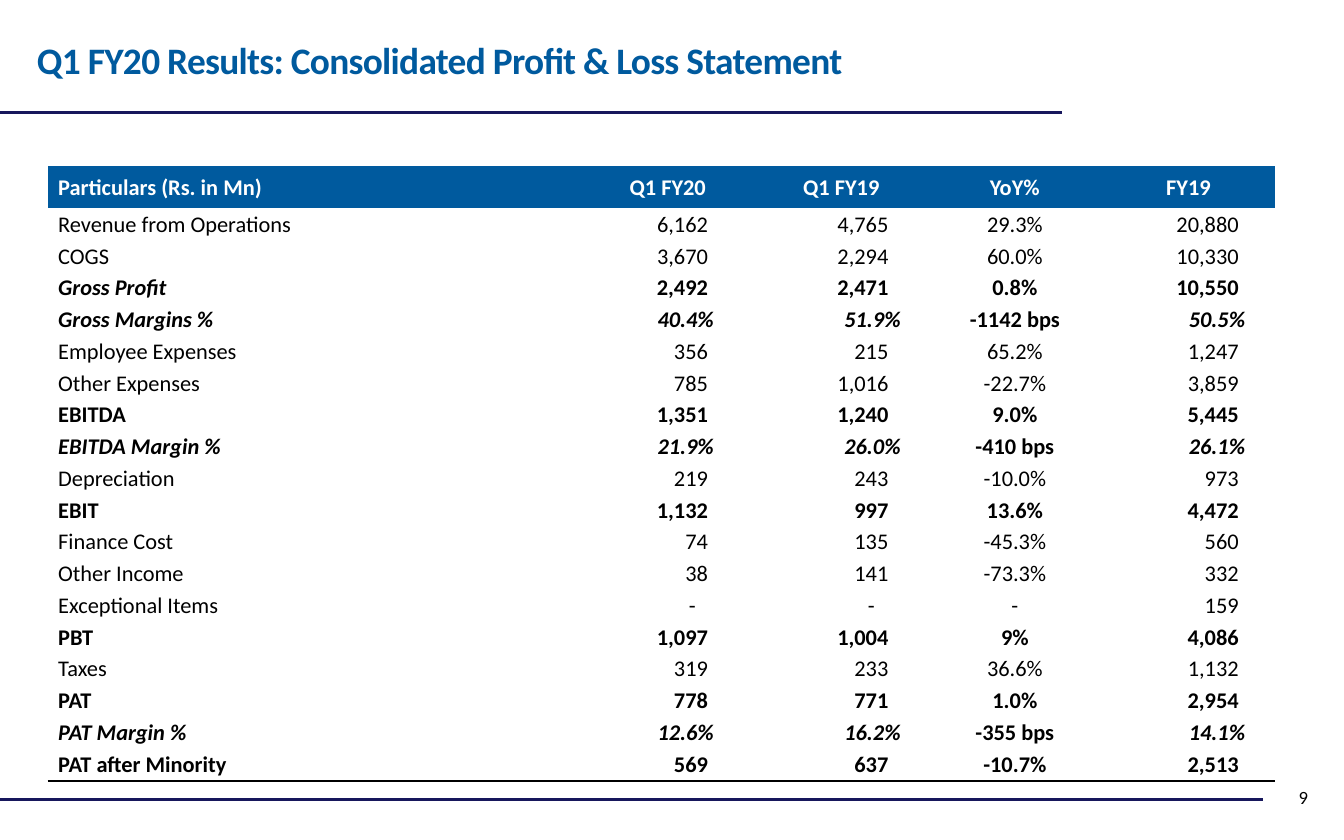
from lxml.etree import SubElement
from pptx import Presentation
from pptx.dml.color import RGBColor
from pptx.enum.shapes import MSO_CONNECTOR as Connector
from pptx.enum.text import MSO_ANCHOR as Anchor, PP_ALIGN as Align
from pptx.oxml import parse_xml
from pptx.oxml.ns import nsdecls, qn
from pptx.util import Cm, Pt

COLORS = {"rule": "17175C", "blue": "005A9E", "white": "FFFFFF", "black": "000000"}
FONT = "Calibri"
NO_STYLE = "{2D5ABB26-0587-4C30-8999-92F81FD0307C}"

HEADINGS = ["Particulars (Rs. in Mn)", "Q1 FY20", "Q1 FY19", "YoY%", "FY19"]
# Row styles: "" plain, "b" bold, "l" bold with italic label, "m" margin row
RESULTS = [
    ("", "Revenue from Operations", "6,162", "4,765", "29.3%", "20,880"),
    ("", "COGS", "3,670", "2,294", "60.0%", "10,330"),
    ("l", "Gross Profit", "2,492", "2,471", "0.8%", "10,550"),
    ("m", "Gross Margins %", "40.4%", "51.9%", "-1142 bps", "50.5%"),
    ("", "Employee Expenses", "356", "215", "65.2%", "1,247"),
    ("", "Other Expenses", "785", "1,016", "-22.7%", "3,859"),
    ("b", "EBITDA", "1,351", "1,240", "9.0%", "5,445"),
    ("m", "EBITDA Margin %", "21.9%", "26.0%", "-410 bps", "26.1%"),
    ("", "Depreciation", "219", "243", "-10.0%", "973"),
    ("b", "EBIT", "1,132", "997", "13.6%", "4,472"),
    ("", "Finance Cost", "74", "135", "-45.3%", "560"),
    ("", "Other Income", "38", "141", "-73.3%", "332"),
    ("", "Exceptional Items", "-", "-", "-", "159"),
    ("b", "PBT", "1,097", "1,004", "9%", "4,086"),
    ("", "Taxes", "319", "233", "36.6%", "1,132"),
    ("b", "PAT", "778", "771", "1.0%", "2,954"),
    ("m", "PAT Margin %", "12.6%", "16.2%", "-355 bps", "14.1%"),
    ("b", "PAT after Minority", "569", "637", "-10.7%", "2,513"),
]
COLUMN_WIDTHS = [10.08] + [3.28] * 4
YOY = 3
# Right inset in cm of amounts, percentages and dashes, by column
INSETS = {
    1: {"amount": 0.88, "percent": 0.77, "dash": 1.11},
    2: {"amount": 0.75, "percent": 0.52, "dash": 1.01},
    4: {"amount": 0.69, "percent": 0.57, "dash": 0.69},
}


def style_para(para, size, color, bold=False, italic=False, align=Align.LEFT):
    para.alignment = align
    font = para.font
    font.name, font.size = FONT, Pt(size)
    font.bold, font.italic = bold, italic
    font.color.rgb = RGBColor.from_string(COLORS[color])


def add_rule(page, left, top, width):
    rule = page.shapes.add_connector(
        Connector.STRAIGHT, Cm(left), Cm(top), Cm(left + width), Cm(top))
    rule.line.color.rgb = RGBColor.from_string(COLORS["rule"])
    rule.line.width = Pt(1.75)
    SubElement(rule._element.spPr, qn("a:effectLst"))


def add_text(page, text, left, top, width, height, anchor=Anchor.TOP):
    box = page.shapes.add_textbox(Cm(left), Cm(top), Cm(width), Cm(height))
    frame = box.text_frame
    frame.word_wrap = True
    frame.vertical_anchor = anchor
    para = frame.paragraphs[0]
    para.text = text
    return para


def add_header(page, left, top, width):
    """Place the title and the rule under it."""
    title = add_text(page, "Q1 FY20 Results: Consolidated Profit & Loss Statement",
                     left + 0.48, top + 0.58, width + 1.1, 1.12)
    style_para(title, 20, "blue", bold=True)
    title.runs[0].font._element.set("spc", "-40")
    add_rule(page, left, top + 2.13, width)


def add_footer(page, left, top, width):
    """Place the bottom rule and the page number."""
    add_rule(page, left, top + 0.58, width)
    number = add_text(page, "9", left + width - 4.17, top, 5.28, 1.07, Anchor.MIDDLE)
    style_para(number, 10, "black", align=Align.RIGHT)


def fill_cell(cell, text, inset, right=None, **style):
    cell.text = text
    cell.vertical_anchor = Anchor.MIDDLE
    cell.margin_left = Cm(inset)
    cell.margin_right = Cm(inset if right is None else right)
    cell.margin_top, cell.margin_bottom = Cm(0.02), 0
    style_para(cell.text_frame.paragraphs[0], 12, **style)


def add_bottom_border(cell):
    cell._tc.get_or_add_tcPr().insert(0, parse_xml(
        f'<a:lnB {nsdecls("a")} w="{Pt(1)}"><a:solidFill>'
        f'<a:srgbClr val="{COLORS["black"]}"/></a:solidFill></a:lnB>'))


def value_kind(text):
    if text == "-":
        return "dash"
    return "percent" if text.endswith("%") else "amount"


def add_results_table(page, left, top):
    heights = [0.8] + [0.6] * (len(RESULTS) - 1) + [0.63]
    table = page.shapes.add_table(
        len(heights), len(HEADINGS), Cm(left), Cm(top),
        Cm(sum(COLUMN_WIDTHS)), Cm(sum(heights))).table
    table.horz_banding = False
    table._tbl.tblPr.find(qn("a:tableStyleId")).text = NO_STYLE
    for column, width in zip(table.columns, COLUMN_WIDTHS):
        column.width = Cm(width)
    for row, height in zip(table.rows, heights):
        row.height = Cm(height)

    for col, heading in enumerate(HEADINGS):
        cell = table.cell(0, col)
        fill_cell(cell, heading, 0.2, color="white", bold=True,
                  align=Align.CENTER if col else Align.LEFT)
        cell.fill.solid()
        cell.fill.fore_color.rgb = RGBColor.from_string(COLORS["blue"])

    for row, (kind, label, *values) in enumerate(RESULTS, start=1):
        look = {"color": "black", "bold": kind != ""}
        fill_cell(table.cell(row, 0), label, 0.2, italic=kind in ("l", "m"), **look)
        for col, value in enumerate(values, start=1):
            cell = table.cell(row, col)
            if col == YOY:
                fill_cell(cell, value, 0.02, align=Align.CENTER, **look)
            else:
                fill_cell(cell, value, 0.02, INSETS[col][value_kind(value)],
                          italic=kind == "m", align=Align.RIGHT, **look)
        for cell in table.rows[row].cells:
            cell.fill.background()
    for cell in table.rows[len(RESULTS)].cells:
        add_bottom_border(cell)


def main():
    deck = Presentation()
    deck.slide_width, deck.slide_height = Cm(25.4), Cm(15.88)
    page = deck.slides.add_slide(deck.slide_layouts[6])
    add_footer(page, -0.04, 14.53, 23.9)
    add_header(page, -0.03, 0, 20.1)
    add_results_table(page, 0.9, 3.14)
    deck.save("out.pptx")


if __name__ == "__main__":
    main()
